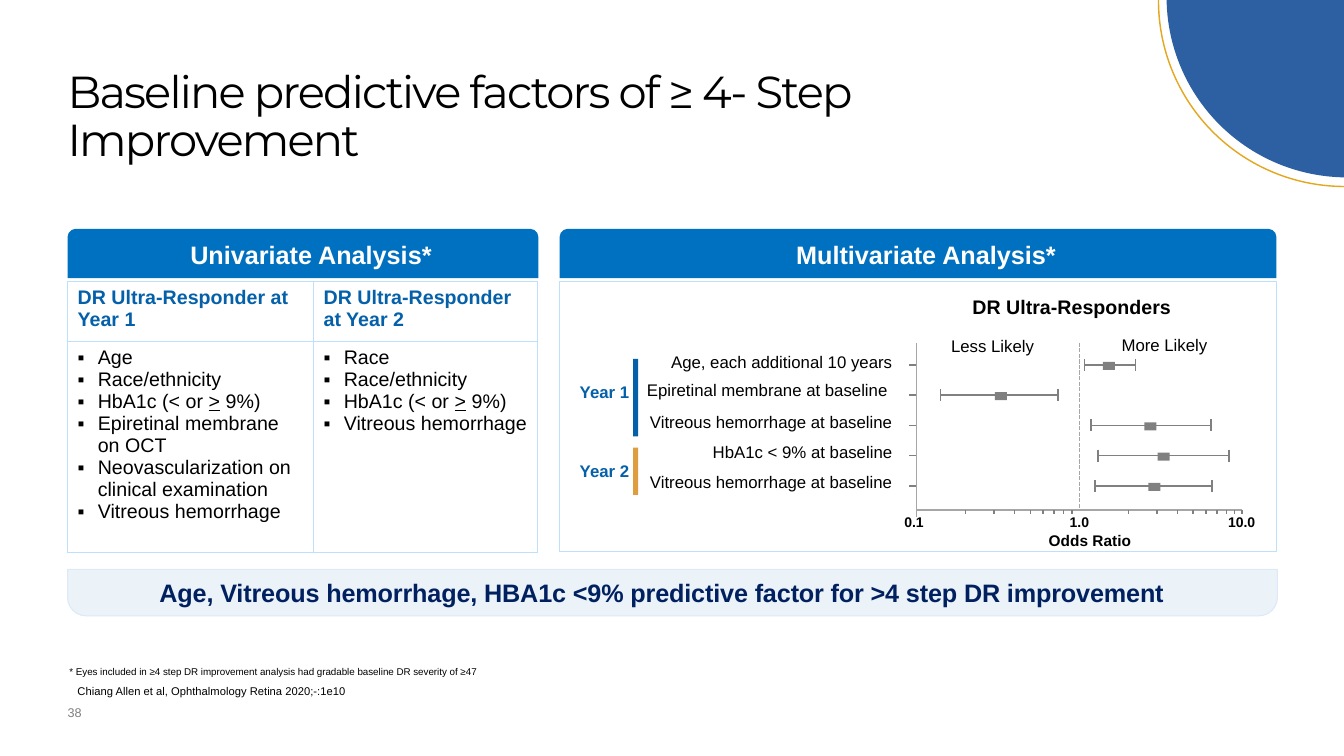
from math import log10
from lxml.etree import SubElement
from pptx import Presentation
from pptx.dml.color import RGBColor
from pptx.enum.dml import MSO_LINE
from pptx.enum.shapes import MSO_CONNECTOR, MSO_SHAPE as SHAPE
from pptx.enum.text import MSO_ANCHOR as ANCHOR, PP_ALIGN as ALIGN
from pptx.oxml.ns import qn
from pptx.util import Pt

PX = 9144  # 100 px to the inch
HEX = {
    "navy": "2D5FA3", "gold": "E4A720", "head": "0070C0", "white": "FFFFFF",
    "black": "000000", "blue": "0460A9", "amber": "DE9D3F", "frame": "BDE1FD",
    "pale": "EBF2F8", "edge": "DCE9F8", "ink": "002060", "axis": "A6A6A6",
    "mark": "808080", "page": "7F7F7F",
}

TITLE = "Baseline predictive factors of ≥ 4- Step Improvement"
# Underscores enclose underlined text
FACTORS = [
    ("DR Ultra-Responder at Year 1", 244, [
        "Age", "Race/ethnicity", "HbA1c (< or _>_ 9%)",
        "Epiretinal membrane on OCT",
        "Neovascularization on clinical examination", "Vitreous hemorrhage"]),
    ("DR Ultra-Responder at Year 2", 222, [
        "Race", "Race/ethnicity", "HbA1c (< or _>_ 9%)",
        "Vitreous hemorrhage"]),
]
# Label, label top, low, odds ratio, high
ODDS = [
    ("Age, each additional 10 years", 344, 1.08, 1.52, 2.21),
    ("Epiretinal membrane at baseline ", 372, 0.14, 0.33, 0.74),
    ("Vitreous hemorrhage at baseline", 404, 1.18, 2.73, 6.43),
    ("HbA1c < 9% at baseline", 433, 1.30, 3.29, 8.31),
    ("Vitreous hemorrhage at baseline", 463, 1.25, 2.89, 6.52),
]
YEARS = [("Year 1", 374, 356, 77, "blue"), ("Year 2", 452, 444, 47, "amber")]
HEADS = [("Univariate Analysis*", 67, 467), ("Multivariate Analysis*", 555, 711)]
CAPTIONS = [
    ("DR Ultra-Responders", (954, 288, 218, 34), 14, True),
    ("Less Likely", (933, 328, 103, 30), 12, False),
    ("More Likely", (1102, 327, 106, 30), 12, False),
    ("Odds Ratio", (1030, 522, 102, 29), 11, True),
    ("0.1", (887, 505, 39, 27), 10, True),
    ("1.0", (1051, 505, 39, 27), 10, True),
    ("10.0", (1208, 505, 47, 27), 10, True),
]
MESSAGE = ("Age, Vitreous hemorrhage, HBA1c <9% predictive factor "
           "for >4 step DR improvement")
NOTE = ("* Eyes included in ≥4 step DR improvement analysis had gradable "
        "baseline DR severity of ≥47")
SOURCE = "Chiang Allen et al, Ophthalmology Retina 2020;-:1e10"

deck = Presentation()
deck.slide_width, deck.slide_height = 1333 * PX, 750 * PX
slide = deck.slides.add_slide(deck.slide_layouts[6])


def emu(*px):
    return [round(n * PX) for n in px]


def rgb(name):
    return RGBColor.from_string(HEX[name])


def write(frame, paras, size=12, color="black", bold=False, align=ALIGN.LEFT,
          font="Arial", track=0, line=None, bullet=None):
    """Fill a text frame, one paragraph per item."""
    for i, words in enumerate(paras):
        para = frame.add_paragraph() if i else frame.paragraphs[0]
        para.alignment = align
        if line:
            para.line_spacing = line
        if bullet:
            props = para._p.get_or_add_pPr()
            props.set("marL", str(20 * PX))
            props.set("indent", str(-20 * PX))
            SubElement(props, qn("a:buFont"), typeface="Arial")
            SubElement(props, qn("a:buChar"), char=bullet)
        for j, part in enumerate(words.split("_")):
            run = para.add_run()
            run.text = part
            run.font.size, run.font.name, run.font.bold = Pt(size), font, bold
            run.font.color.rgb = rgb(color)
            if j % 2:
                run.font.underline = True
            if track:
                run._r.get_or_add_rPr().set("spc", str(track))


def text(at, words, wrap=True, inset=None, anchor=ANCHOR.TOP, **look):
    frame = slide.shapes.add_textbox(*emu(*at)).text_frame
    frame.word_wrap, frame.vertical_anchor = wrap, anchor
    if inset is not None:
        frame.margin_left = frame.margin_right = inset
        frame.margin_top = frame.margin_bottom = inset
    write(frame, [words], **look)


def shape(kind, at, fill=None, edge=None, width=1, adjust=(), turn=0):
    item = slide.shapes.add_shape(kind, *emu(*at))
    item.shadow.inherit = False
    item.rotation = turn
    for i, value in enumerate(adjust):
        item.adjustments[i] = value
    if fill:
        item.fill.solid()
        item.fill.fore_color.rgb = rgb(fill)
    else:
        item.fill.background()
    if edge:
        item.line.color.rgb, item.line.width = rgb(edge), Pt(width)
    else:
        item.line.fill.background()
    return item


def rule(x1, y1, x2, y2, color="mark", dash=None):
    item = slide.shapes.add_connector(MSO_CONNECTOR.STRAIGHT, *emu(x1, y1, x2, y2))
    item.line.color.rgb, item.line.width = rgb(color), Pt(1)
    if dash:
        item.line.dash_style = dash
    SubElement(item._element.spPr, qn("a:effectLst"))


def border(cell):
    props = cell._tc.get_or_add_tcPr()
    for i, side in enumerate(("lnL", "lnR", "lnT", "lnB")):
        line = props.makeelement(qn("a:" + side), {"w": str(Pt(0.5))})
        fill = SubElement(line, qn("a:solidFill"))
        SubElement(fill, qn("a:srgbClr"), val=HEX["frame"])
        props.insert(i, line)


def corner():
    shape(SHAPE.PIE, (1157, -182, 358, 358), "navy", adjust=(108.29, 162), turn=270)
    shape(SHAPE.BLOCK_ARC, (1149, -184, 369, 369), edge="gold",
          adjust=(107.95, 162.65, 0), turn=270)


def factors():
    grid = slide.shapes.add_table(2, len(FACTORS), *emu(67, 279, 466, 269)).table
    grid.first_row = grid.horz_banding = False
    grid.rows[0].height, grid.rows[1].height = emu(60, 209)
    for col, (head, width, items) in enumerate(FACTORS):
        grid.columns[col].width = width * PX
        top, body = grid.cell(0, col), grid.cell(1, col)
        write(top.text_frame, [head], size=14, color="blue", bold=True)
        write(body.text_frame, items, size=14, bullet="▪")
        for cell in (top, body):
            cell.fill.background()
            border(cell)


def forest():
    """Draw the odds ratios on a log scale."""
    left, base, decade = 909, 506, 161.5

    def spot(value):
        return left + decade * log10(value / 0.1)

    rule(left, 340, left, 513, "axis")
    rule(left, base, spot(10), base, "axis")
    rule(spot(1), 340, spot(1), base, "axis", MSO_LINE.SQUARE_DOT)
    for tick in [n / 10 for n in range(2, 10)] + list(range(2, 11)):
        rule(spot(tick), base, spot(tick), base + 4)
    for i, (label, top, low, mid, high) in enumerate(ODDS):
        y = 362 + 30 * i
        rule(left - 7, y, left, y)
        rule(spot(low), y, spot(high), y)
        for end in (low, high):
            rule(spot(end), y - 6, spot(end), y + 6)
        shape(SHAPE.RECTANGLE, (spot(mid) - 6, y - 3, 12, 8), "mark")
        text((630, top, 265, 30), label, align=ALIGN.RIGHT)
    for words, at, size, bold in CAPTIONS:
        text(at, words, wrap=False, size=size, bold=bold, align=ALIGN.CENTER)
    for year, top, start, tall, color in YEARS:
        shape(SHAPE.RECTANGLE, (628, start, 5, tall), color)
        text((564, top, 70, 30), year, wrap=False, color="blue", bold=True,
             align=ALIGN.RIGHT)


corner()
text((67, 42, 1060, 150), TITLE, inset=0, anchor=ANCHOR.MIDDLE, size=32,
     font="Montserrat", track=-130, line=0.9)
for head, x, wide in HEADS:
    bar = shape(SHAPE.ROUND_2_SAME_RECTANGLE, (x, 227, wide, 49), "head")
    frame = bar.text_frame
    frame.vertical_anchor, frame.margin_left = ANCHOR.MIDDLE, 16 * PX
    frame.margin_right = frame.margin_top = frame.margin_bottom = 0
    write(frame, [head], size=18, color="white", bold=True, align=ALIGN.CENTER)
factors()
shape(SHAPE.RECTANGLE, (555, 279, 711, 268), edge="frame", width=0.5)
forest()
shape(SHAPE.ROUND_2_SAME_RECTANGLE, (67, 565, 1200, 46), "pale", "edge", 0.75,
      adjust=(0, 0.4))
text((67, 573, 1178, 30), MESSAGE, inset=0, size=18, color="ink", bold=True,
     align=ALIGN.CENTER, track=-10)
text((59, 656, 1200, 22), NOTE, size=7)
text((67, 674, 408, 24), SOURCE, size=8)
text((67, 699, 33, 43), "38", inset=0, size=9, color="page")
deck.save("out.pptx")
